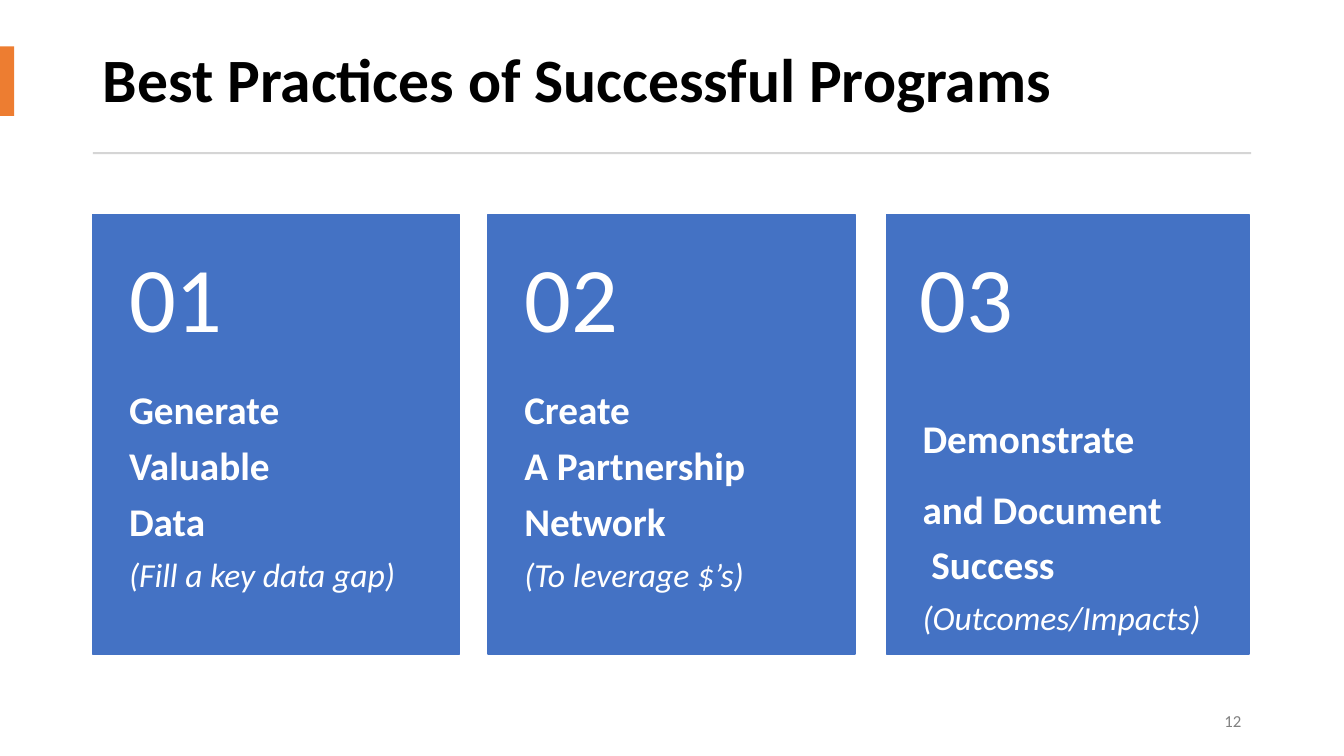
import pptx
import pptx.util
import pptx.dml.color
import pptx.enum.shapes
import pptx.enum.text

Inches, Pt = pptx.util.Inches, pptx.util.Pt
ALIGN = pptx.enum.text.PP_ALIGN
ANCHOR = pptx.enum.text.MSO_ANCHOR

COLORS = {"title": "000000", "accent": "ED7D31", "rule": "D5D5D5",
          "card": "4472C4", "card_text": "FFFFFF", "number": "808080"}
LEFT, WIDTH = 0.92, 11.49
CARD_TOP, CARD_HEIGHT, HEAD_HEIGHT = 2.13, 4.36, 1.75
CARD_WIDTH, CARD_PITCH = 3.64, 3.92

# Number, card left and width, lines as (text, line spacing), closing note
CARDS = [
    ("01", LEFT, CARD_WIDTH,
     [("Generate", 0.9), ("Valuable", 0.9), ("Data", 0.9)],
     "(Fill a key data gap)"),
    ("02", LEFT + CARD_PITCH, CARD_WIDTH,
     [("Create", 0.9), ("A Partnership", 0.9), ("Network", 0.9)],
     "(To leverage $’s)"),
    ("03", 8.79, 3.6,
     [("Demonstrate\vand Document", 1.5), (" Success", 0.9)],
     "(Outcomes/Impacts)"),
]


def rgb(name):
    return pptx.dml.color.RGBColor.from_string(COLORS[name])


def add_rect(s, box, color, outlined=False):
    sp = s.shapes.add_shape(pptx.enum.shapes.MSO_SHAPE.RECTANGLE,
                            *map(Inches, box))
    sp.shadow.inherit = False
    sp.fill.solid()
    sp.fill.fore_color.rgb = rgb(color)
    if outlined:
        sp.line.color.rgb = rgb(color)
        sp.line.width = Pt(1)
    else:
        sp.line.fill.background()
    return sp


def add_box(s, box, anchor=ANCHOR.MIDDLE, insets=(0.1, 0.05, 0.1, 0.05)):
    tf = s.shapes.add_textbox(*map(Inches, box)).text_frame
    tf.word_wrap = True
    tf.vertical_anchor = anchor
    (tf.margin_left, tf.margin_top,
     tf.margin_right, tf.margin_bottom) = map(Inches, insets)
    return tf


def write(p, text, size, color, bold=False, italic=False,
          spacing=0.9, after=0, align=ALIGN.LEFT):
    p.alignment = align
    p.line_spacing = spacing
    p.space_after = Pt(after)
    for i, line in enumerate(text.split("\v")):
        if i:
            p.add_line_break()
        r = p.add_run()
        r.text = line
        r.font.name = "Calibri"
        r.font.size = Pt(size)
        r.font.bold = bold
        r.font.italic = italic
        r.font.color.rgb = rgb(color)


def add_header(s, left, top, width, height):
    tf = add_box(s, (left, top, width, height))
    write(tf.paragraphs[0], "Best Practices of Successful Programs", 44,
          "title", bold=True)
    # Accent tab at the slide edge and rule below the title
    add_rect(s, (0, top + 0.19, 0.14, 0.69), "accent")
    add_rect(s, (left, top + 1.24, width, 0.02), "rule")


def add_card(s, left, top, width, height, number_left, number, lines, note):
    add_rect(s, (left, top, width, height), "card", outlined=True)
    # Body text
    tf = add_box(s, (left, top + HEAD_HEIGHT, width, height - HEAD_HEIGHT),
                 ANCHOR.TOP, (0.36, 0, 0.36, 0.36))
    p = tf.paragraphs[0]
    for text, spacing in lines:
        write(p, text, 28, "card_text", bold=True, spacing=spacing, after=9.5)
        p = tf.add_paragraph()
    write(p, note, 24, "card_text", italic=True)
    # Large number
    tf = add_box(s, (number_left, top, CARD_WIDTH, HEAD_HEIGHT),
                 insets=(0.36, 0.18, 0.36, 0.18))
    write(tf.paragraphs[0], number, 66, "card_text")


def add_slide_number(s, left, top, width, height):
    tf = add_box(s, (left, top, width, height))
    write(tf.paragraphs[0], "12", 12, "number", spacing=1.0, after=6,
          align=ALIGN.RIGHT)


def main():
    prs = pptx.Presentation()
    prs.slide_width, prs.slide_height = Inches(13.33), Inches(7.5)
    s = prs.slides.add_slide(prs.slide_layouts[6])
    add_header(s, LEFT, 0.27, WIDTH, 1.1)
    add_slide_number(s, 9.69, 6.95, 2.72, 0.4)
    for i, (number, left, width, lines, note) in enumerate(CARDS):
        add_card(s, left, CARD_TOP, width, CARD_HEIGHT,
                 LEFT + i * CARD_PITCH, number, lines, note)
    prs.save("out.pptx")


if __name__ == "__main__":
    main()
